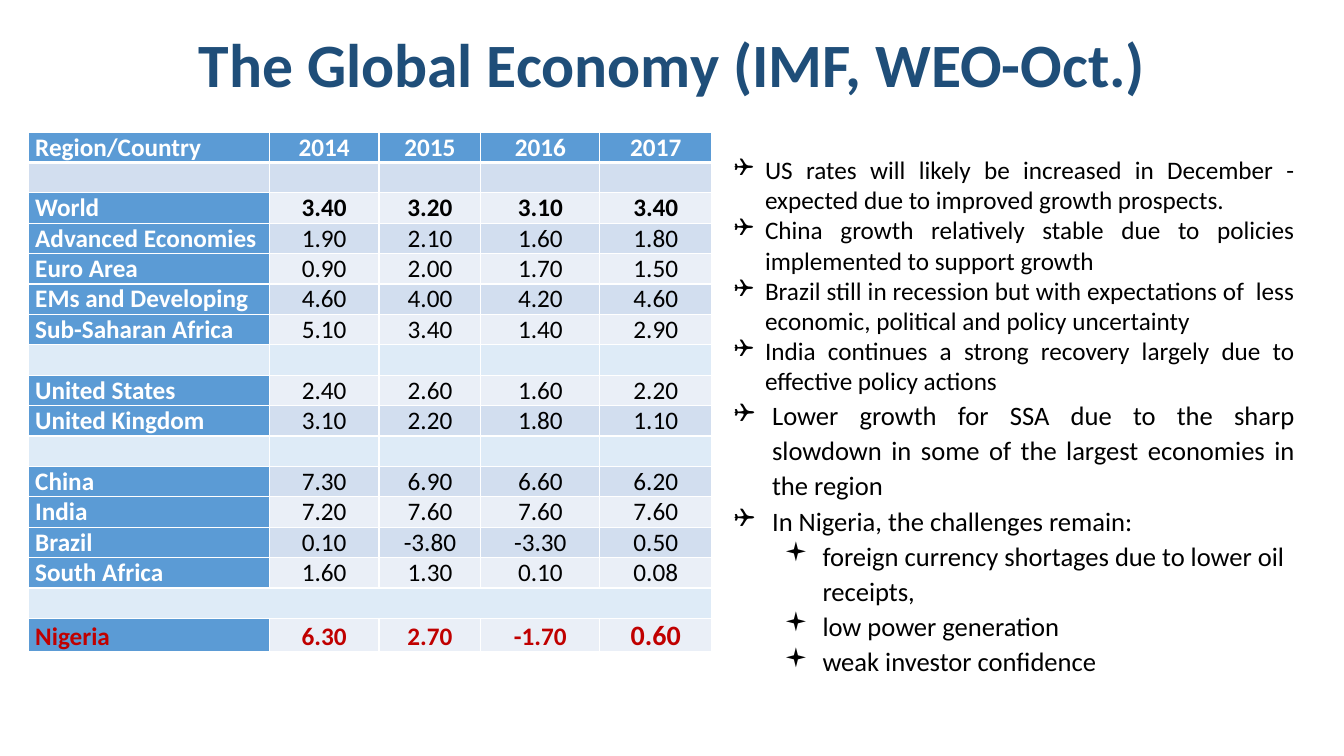
import pptx
import pptx.dml.color
import pptx.enum.text
import pptx.oxml
import pptx.oxml.ns
import pptx.util

Inches = pptx.util.Inches
Pt = pptx.util.Pt
Align = pptx.enum.text.PP_ALIGN
Anchor = pptx.enum.text.MSO_ANCHOR

FONT = "Calibri"
NAVY, BLUE, RED = "1F4E79", "5B9BD5", "C00000"
WHITE, BLACK = "FFFFFF", "000000"
LIGHT, MEDIUM, GAP = "EAEFF7", "D2DEEF", "DEEBF7"

COLUMN_WIDTHS = [2.39, 1.09, 1.01, 1.18, 1.11]
GROWTH = [
    ["Region/Country", "2014", "2015", "2016", "2017"],
    [],
    ["World", "3.40", "3.20", "3.10", "3.40"],
    ["Advanced Economies", "1.90", "2.10", "1.60", "1.80"],
    ["Euro Area", "0.90", "2.00", "1.70", "1.50"],
    ["EMs and Developing", "4.60", "4.00", "4.20", "4.60"],
    ["Sub-Saharan Africa", "5.10", "3.40", "1.40", "2.90"],
    [],
    ["United States", "2.40", "2.60", "1.60", "2.20"],
    ["United Kingdom", "3.10", "2.20", "1.80", "1.10"],
    [],
    ["China", "7.30", "6.90", "6.60", "6.20"],
    ["India", "7.20", "7.60", "7.60", "7.60"],
    ["Brazil", "0.10", "-3.80", "-3.30", "0.50"],
    ["South Africa", "1.60", "1.30", "0.10", "0.08"],
    [],
    ["Nigeria", "6.30", "2.70", "-1.70", "0.60"],
]
LAST_ROW = len(GROWTH) - 1
MERGED_ROW = LAST_ROW - 1

GLOBAL_POINT = dict(size=18, indent=0.31, hang=0.31, spacing=1.0, mark="❑")
AFRICA_POINT = dict(size=19, indent=0.38, hang=0.38, spacing=1.1, mark="❑")
CHALLENGE = dict(size=19, indent=0.88, hang=0.38, spacing=1.1, mark="▪")
OUTLOOK = [
    ("US rates will likely be increased in December - expected due to improved growth prospects.",
     GLOBAL_POINT, Align.JUSTIFY),
    ("China growth relatively stable due to policies implemented to support growth",
     GLOBAL_POINT, Align.JUSTIFY),
    ("Brazil still in recession but with expectations of  less economic, political and policy uncertainty",
     GLOBAL_POINT, Align.JUSTIFY),
    ("India continues a strong recovery largely due to effective policy actions",
     GLOBAL_POINT, Align.JUSTIFY),
    ("Lower growth for SSA due to the sharp slowdown in some of the largest economies in the region",
     AFRICA_POINT, Align.JUSTIFY),
    ("In Nigeria, the challenges remain:", AFRICA_POINT, Align.LEFT),
    ("foreign currency shortages due to lower oil receipts,", CHALLENGE, Align.LEFT),
    ("low power generation", CHALLENGE, Align.LEFT),
    ("weak investor confidence", CHALLENGE, Align.JUSTIFY),
]


def paint(target, color):
    if hasattr(target, "solid"):
        target.solid()
        target = target.fore_color
    else:
        target = target.color
    target.rgb = pptx.dml.color.RGBColor.from_string(color)


def write(paragraph, text, size, color, bold=False, align=Align.LEFT):
    paragraph.text = text
    paragraph.alignment = align
    for run in paragraph.runs:
        run.font.name = FONT
        run.font.size = Pt(size)
        run.font.bold = bold
        paint(run.font, color)


def add_title(slide, box):
    frame = slide.shapes.add_textbox(*map(Inches, box)).text_frame
    frame.word_wrap = True
    frame.vertical_anchor = Anchor.MIDDLE
    heading = frame.paragraphs[0]
    write(heading, "The Global Economy (IMF, WEO-Oct.)", 44, NAVY, True, Align.CENTER)
    heading.line_spacing = 0.9


def set_borders(cell, top, bottom):
    properties = cell._tc.get_or_add_tcPr()
    for position, (side, points) in enumerate([("L", 1), ("R", 1), ("T", top), ("B", bottom)]):
        properties.insert(position, pptx.oxml.parse_xml(
            f'<a:ln{side} {pptx.oxml.ns.nsdecls("a")} w="{Pt(points)}"><a:solidFill>'
            f'<a:srgbClr val="{WHITE}"/></a:solidFill></a:ln{side}>'))


def cell_fill(row, column):
    if not GROWTH[row] and row > 1:
        return GAP
    if row == 0 or (GROWTH[row] and column == 0):
        return BLUE
    return MEDIUM if row % 2 else LIGHT


def cell_style(row, column):
    if row == LAST_ROW:
        return (20 if column == 4 else 18), RED, True
    if row == 0 or column == 0:
        return 18, WHITE, True
    return 18, BLACK, row == 2


def add_growth_table(slide, box):
    table = slide.shapes.add_table(
        len(GROWTH), len(COLUMN_WIDTHS), *map(Inches, box)).table
    for column, share in zip(table.columns, COLUMN_WIDTHS):
        column.width = Inches(box[2] * share / sum(COLUMN_WIDTHS))
    for index, values in enumerate(GROWTH):
        table.rows[index].height = Inches(box[3] / len(GROWTH))
        for position in range(len(COLUMN_WIDTHS)):
            cell = table.cell(index, position)
            cell.margin_left = cell.margin_right = Inches(0.07)
            cell.margin_top = cell.margin_bottom = 0
            cell.vertical_anchor = Anchor.BOTTOM
            cell.fill.solid()
            paint(cell.fill, cell_fill(index, position))
            set_borders(cell, 3 if index == 1 else 1, 3 if index == 0 else 1)
            entry = cell.text_frame.paragraphs[0]
            if values:
                write(entry, values[position], *cell_style(index, position),
                      Align.CENTER if position else Align.LEFT)
            else:
                entry._p.append(pptx.oxml.parse_xml(
                    f'<a:endParaRPr {pptx.oxml.ns.nsdecls("a")} sz="1800">'
                    f'<a:latin typeface="{FONT}"/></a:endParaRPr>'))
    table.cell(MERGED_ROW, 0).merge(table.cell(MERGED_ROW, len(COLUMN_WIDTHS) - 1))


def add_bullet(paragraph, indent, hang, mark):
    properties = paragraph._p.get_or_add_pPr()
    properties.set("marL", str(Inches(indent)))
    properties.set("indent", str(-Inches(hang)))
    for tag in ('buFont typeface="Wingdings"', f'buChar char="{mark}"'):
        properties.append(pptx.oxml.parse_xml(f'<a:{tag} {pptx.oxml.ns.nsdecls("a")}/>'))


def add_outlook(slide, box):
    frame = slide.shapes.add_textbox(*map(Inches, box)).text_frame
    frame.word_wrap = True
    for index, (text, style, align) in enumerate(OUTLOOK):
        point = frame.add_paragraph() if index else frame.paragraphs[0]
        write(point, text, style["size"], BLACK, align=align)
        point.level = 1 if style is CHALLENGE else 0
        point.line_spacing = style["spacing"]
        add_bullet(point, style["indent"], style["hang"], style["mark"])


def main():
    deck = pptx.Presentation()
    deck.slide_width, deck.slide_height = Inches(13.33), Inches(7.5)
    slide = deck.slides.add_slide(deck.slide_layouts[6])
    add_title(slide, (0.92, -0.06, 11.5, 1.45))
    add_growth_table(slide, (0.28, 1.31, 6.78, 5.13))
    add_outlook(slide, (7.18, 1.48, 5.76, 5.34))
    deck.save("out.pptx")


if __name__ == "__main__":
    main()
